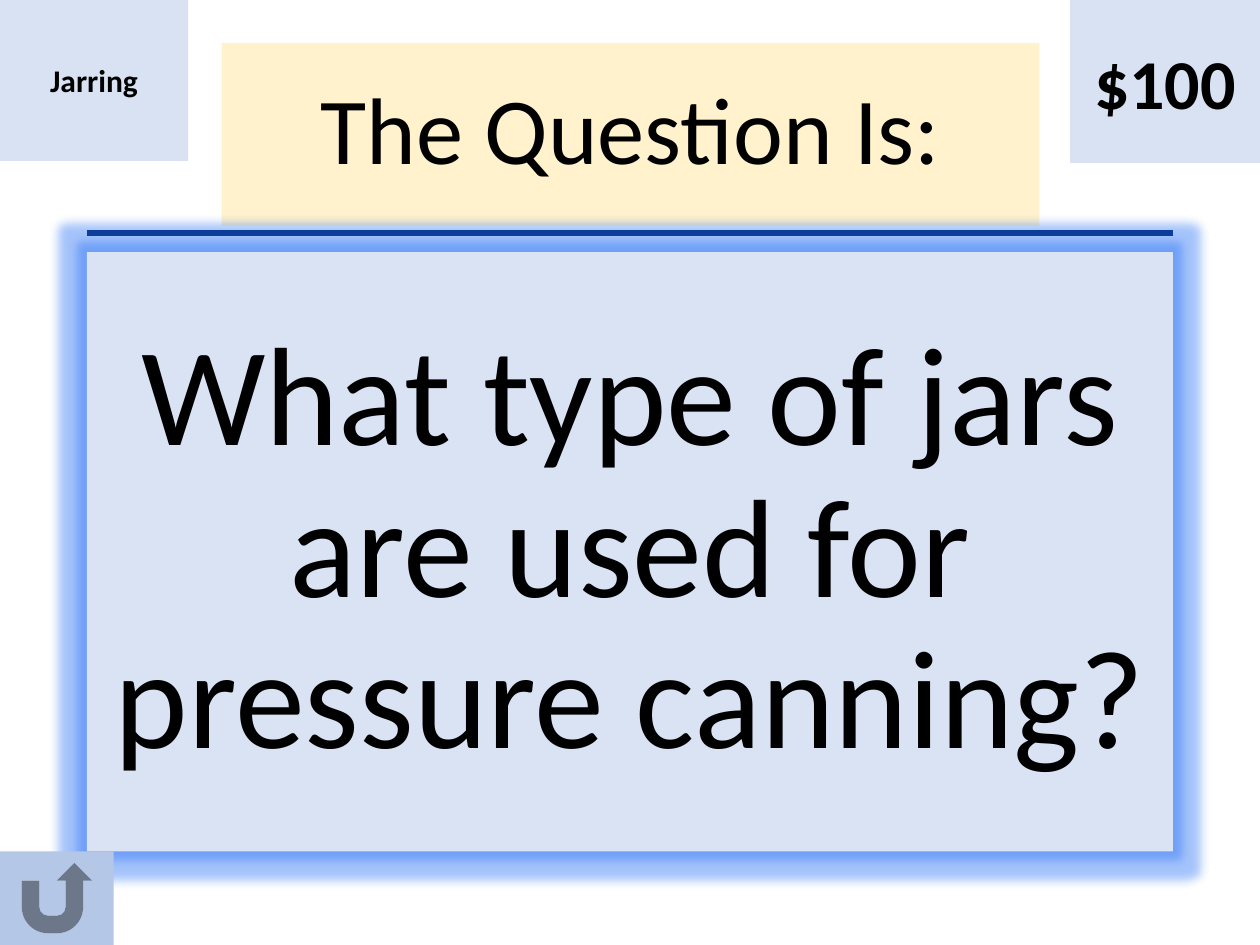
from dataclasses import dataclass

from lxml import etree
from pptx import Presentation
from pptx.dml.color import RGBColor
from pptx.enum.shapes import MSO_CONNECTOR, MSO_SHAPE
from pptx.enum.text import MSO_ANCHOR, PP_ALIGN
from pptx.oxml.ns import qn
from pptx.util import Pt

RECTANGLE = MSO_SHAPE.RECTANGLE
BLANK_BUTTON = MSO_SHAPE.ACTION_BUTTON_CUSTOM
RETURN_BUTTON = MSO_SHAPE.ACTION_BUTTON_RETURN
STRAIGHT = MSO_CONNECTOR.STRAIGHT
MIDDLE = MSO_ANCHOR.MIDDLE
CENTER = PP_ALIGN.CENTER

SLIDE_WIDTH, SLIDE_HEIGHT = 720, 540
CONTENT_LEFT, CONTENT_WIDTH = 49.7, 620.6
RULE_TOP = 133.2


@dataclass
class Panel:
    kind: MSO_SHAPE
    left: float
    top: float
    width: float
    height: float
    fill: str
    text: str = ""
    size: float = 18
    bold: bool = False
    line_spacing: float = 1.0
    opacity: int = 100
    glow: bool = False


PANELS = [
    # Title and question
    Panel(RECTANGLE, 126.7, 24.5, 467.3, 104.4, "FFF2CC",
          "The Question Is:", 54, line_spacing=0.9),
    Panel(RECTANGLE, CONTENT_LEFT, 144, CONTENT_WIDTH, 342.5, "DAE3F3",
          "What type of jars are used for pressure canning?", 80,
          line_spacing=0.9, glow=True),
    # Return button
    Panel(RETURN_BUTTON, 0, 486.5, 65, 53.5, "B4C7E7"),
    # Category and value
    Panel(BLANK_BUTTON, 0, -0.7, 107.5, 92.7, "B4C7E7",
          "Jarring", 18, bold=True, opacity=50),
    Panel(BLANK_BUTTON, 611.5, 0, 108.5, 93, "B4C7E7",
          "$100", 40, bold=True, opacity=50),
]


def color(value: str) -> RGBColor:
    return RGBColor.from_string(value)


def add_alpha(color_element, percent: int) -> None:
    etree.SubElement(color_element, qn("a:alpha"), val=str(percent * 1000))


def add_glow(shape, radius: float, value: str, percent: int) -> None:
    effects = shape._element.spPr.find(qn("a:effectLst"))
    glow = etree.SubElement(effects, qn("a:glow"), rad=str(Pt(radius)))
    add_alpha(etree.SubElement(glow, qn("a:srgbClr"), val=value), percent)


def add_rule(slide) -> None:
    rule = slide.shapes.add_connector(
        STRAIGHT, Pt(CONTENT_LEFT), Pt(RULE_TOP),
        Pt(CONTENT_LEFT + CONTENT_WIDTH), Pt(RULE_TOP))
    rule.line.color.rgb = color("002060")
    rule.line.width = Pt(3)
    etree.SubElement(rule._element.spPr, qn("a:effectLst"))


def write_text(shape, panel: Panel) -> None:
    frame = shape.text_frame
    frame.word_wrap = True
    frame.vertical_anchor = MIDDLE
    paragraph = frame.paragraphs[0]
    paragraph.alignment = CENTER
    paragraph.line_spacing = panel.line_spacing
    run = paragraph.add_run()
    run.text = panel.text
    font_format = {"name": "Calibri", "size": Pt(panel.size), "bold": panel.bold}
    for attribute, value in font_format.items():
        setattr(run.font, attribute, value)
    run.font.color.rgb = color("000000")


def add_panel(slide, panel: Panel) -> None:
    shape = slide.shapes.add_shape(
        panel.kind, Pt(panel.left), Pt(panel.top), Pt(panel.width), Pt(panel.height))
    shape.shadow.inherit = False
    shape.fill.solid()
    shape.fill.fore_color.rgb = color(panel.fill)
    shape.line.fill.background()
    if panel.opacity < 100:
        fill_color = shape._element.spPr.find(qn("a:solidFill")).find(qn("a:srgbClr"))
        add_alpha(fill_color, panel.opacity)
    if panel.glow:
        add_glow(shape, 11, "1E6BF5", 40)
    if panel.text:
        write_text(shape, panel)


def main() -> None:
    presentation = Presentation()
    presentation.slide_width = Pt(SLIDE_WIDTH)
    presentation.slide_height = Pt(SLIDE_HEIGHT)
    slide = presentation.slides.add_slide(presentation.slide_layouts[6])
    add_rule(slide)
    for panel in PANELS:
        add_panel(slide, panel)
    presentation.save("out.pptx")


if __name__ == "__main__":
    main()
